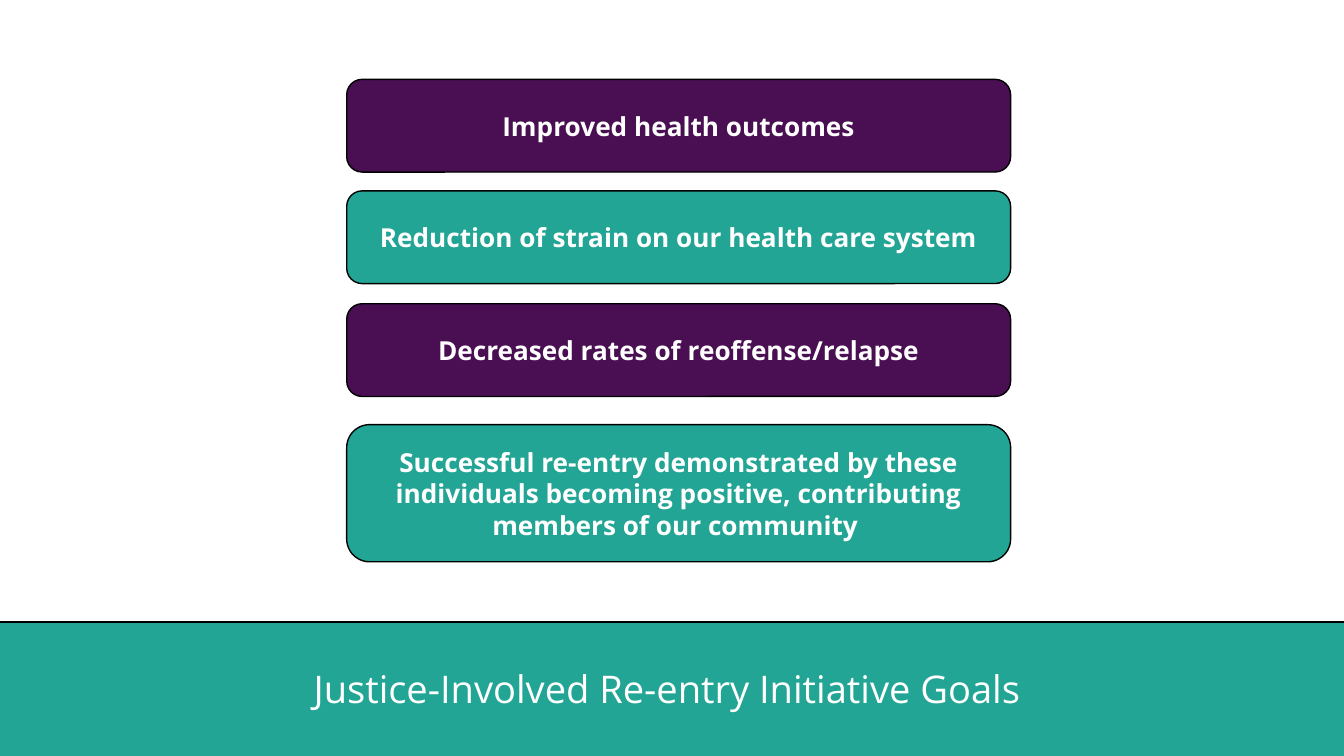
from pptx import Presentation
from pptx.dml.color import RGBColor
from pptx.enum.shapes import MSO_SHAPE as Shape
from pptx.enum.text import MSO_ANCHOR as Anchor, PP_ALIGN as Align
from pptx.util import Inches, Pt

# Content
TITLE = "Justice-Involved Re-entry Initiative Goals "
GOALS = [  # text, top, height
    ("Improved health outcomes", 0.59, 0.69),
    ("Reduction of strain on our health care system", 1.42, 0.69),
    ("Decreased rates of reoffense/relapse", 2.26, 0.69),
    ("Successful re-entry demonstrated by these individuals becoming "
     "positive, contributing members of our community ", 3.16, 1.02),
]
THEME = {
    "font": "Open Sans",
    "text": RGBColor(0xFF, 0xFF, 0xFF),
    "line": RGBColor(0, 0, 0),
    "fills": [RGBColor(0x49, 0x0F, 0x52), RGBColor(0x23, 0xA5, 0x95)],
    "title": 20.4,
    "goal": 14,
}
LEFT, WIDTH = 2.58, 4.94


def add_box(slide, kind, area, fill):
    box = slide.shapes.add_shape(kind, *map(Inches, area))
    box.shadow.inherit = False
    box.fill.solid()
    box.fill.fore_color.rgb = fill
    box.line.color.rgb = THEME["line"]
    box.line.width = Pt(0.75)
    return box


def set_text(shape, text, size, bold):
    frame = shape.text_frame
    frame.text = text
    frame.word_wrap = True
    frame.vertical_anchor = Anchor.MIDDLE
    frame.margin_left = frame.margin_right = Inches(0.1)
    frame.margin_top = frame.margin_bottom = Inches(0.1)
    para = frame.paragraphs[0]
    para.alignment = Align.CENTER
    font = para.font
    font.name, font.size, font.bold = THEME["font"], Pt(size), bold
    font.color.rgb = THEME["text"]


def main():
    deck = Presentation()
    deck.slide_width = Inches(10)
    deck.slide_height = Inches(10 * 9 / 16)
    slide = deck.slides.add_slide(deck.slide_layouts[5])

    # Footer band, placed behind the title
    title = slide.shapes.title
    band = add_box(slide, Shape.RECTANGLE, (-0.01, 4.63, 10.03, 1),
                   THEME["fills"][1])
    title.element.addprevious(band.element)

    # Title
    title.left, title.top = Inches(1.72), Inches(4.8)
    title.width, title.height = Inches(6.56), Inches(0.65)
    set_text(title, TITLE, THEME["title"], False)

    # Goal boxes in alternating colours
    for i, (text, top, height) in enumerate(GOALS):
        box = add_box(slide, Shape.ROUNDED_RECTANGLE,
                      (LEFT, top, WIDTH, height), THEME["fills"][i % 2])
        set_text(box, text, THEME["goal"], True)

    deck.save("out.pptx")


if __name__ == "__main__":
    main()
